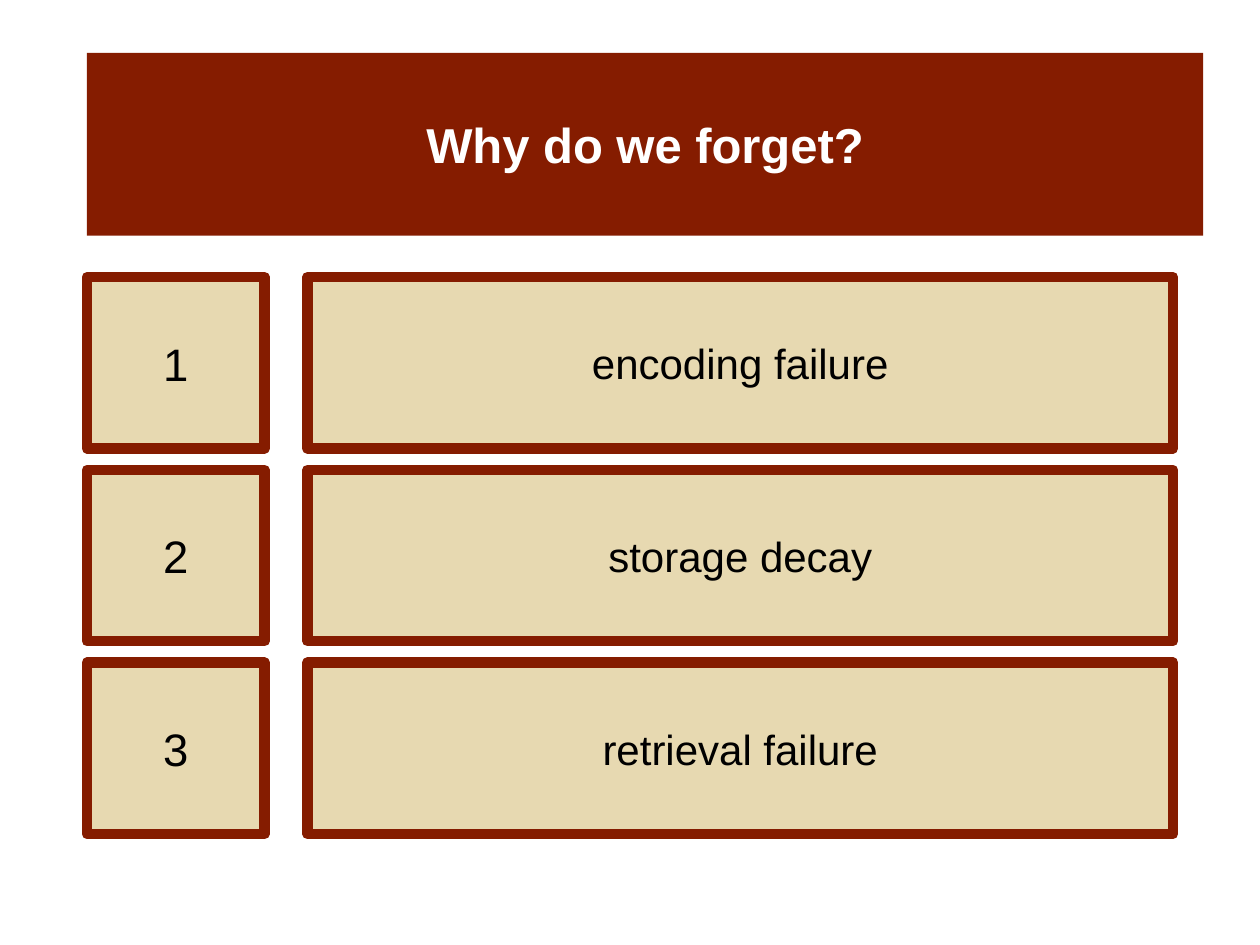
"""Build a slide with a title banner and three numbered reasons for forgetting."""
import pptx
import pptx.dml.color
import pptx.enum.shapes
import pptx.enum.text
import pptx.util


def color(value):
    return pptx.dml.color.RGBColor.from_string(value)


def add_box(slide, bounds, text, fill, border, font_format):
    shape = slide.shapes.add_shape(
        pptx.enum.shapes.MSO_SHAPE.RECTANGLE,
        *[pptx.util.Inches(length) for length in bounds])
    shape.shadow.inherit = False
    shape.fill.solid()
    shape.fill.fore_color.rgb = color(fill)
    if border:
        shape.line.color.rgb = color(border)
        shape.line.width = pptx.util.Pt(6)
    else:
        shape.line.fill.background()
    shape.text_frame.word_wrap = True
    shape.text_frame.vertical_anchor = pptx.enum.text.MSO_ANCHOR.MIDDLE
    paragraph = shape.text_frame.paragraphs[0]
    paragraph.alignment = pptx.enum.text.PP_ALIGN.CENTER
    run = paragraph.add_run()
    run.text = text
    run.font.color.rgb = color(font_format["color"])
    for name, value in font_format["font"].items():
        setattr(run.font, name, value)


RED, SAND, WHITE, BLACK = "851C00", "E7D9B1", "FFFFFF", "000000"
TITLE_FORMAT = {"color": WHITE, "font": {"name": "Arial", "size": pptx.util.Pt(28), "bold": True}}
NUMBER_FORMAT = {"color": BLACK, "font": {"name": "Arial", "size": pptx.util.Pt(26)}}
REASON_FORMAT = {"color": BLACK, "font": {"name": "Arial", "size": pptx.util.Pt(24)}}

LEFT, NUMBER_WIDTH, COLUMN_GAP, REASON_WIDTH = 0.69, 1.41, 0.34, 6.87
TOP, ROW_HEIGHT, ROW_PITCH = 2.2, 1.36, 1.53
REASON_LEFT = LEFT + NUMBER_WIDTH + COLUMN_GAP

presentation = pptx.Presentation()
presentation.slide_width = pptx.util.Inches(10)
presentation.slide_height = pptx.util.Inches(7.5)
slide = presentation.slides.add_slide(presentation.slide_layouts[6])

add_box(slide, (LEFT, 0.42, 8.86, 1.45), "Why do we forget?", RED, None, TITLE_FORMAT)

for row, reason in enumerate(["encoding failure", "storage decay", "retrieval failure"]):
    row_top = TOP + row * ROW_PITCH
    add_box(slide, (LEFT, row_top, NUMBER_WIDTH, ROW_HEIGHT), str(row + 1), SAND, RED, NUMBER_FORMAT)
    add_box(slide, (REASON_LEFT, row_top, REASON_WIDTH, ROW_HEIGHT), reason, SAND, RED, REASON_FORMAT)

presentation.save("out.pptx")
